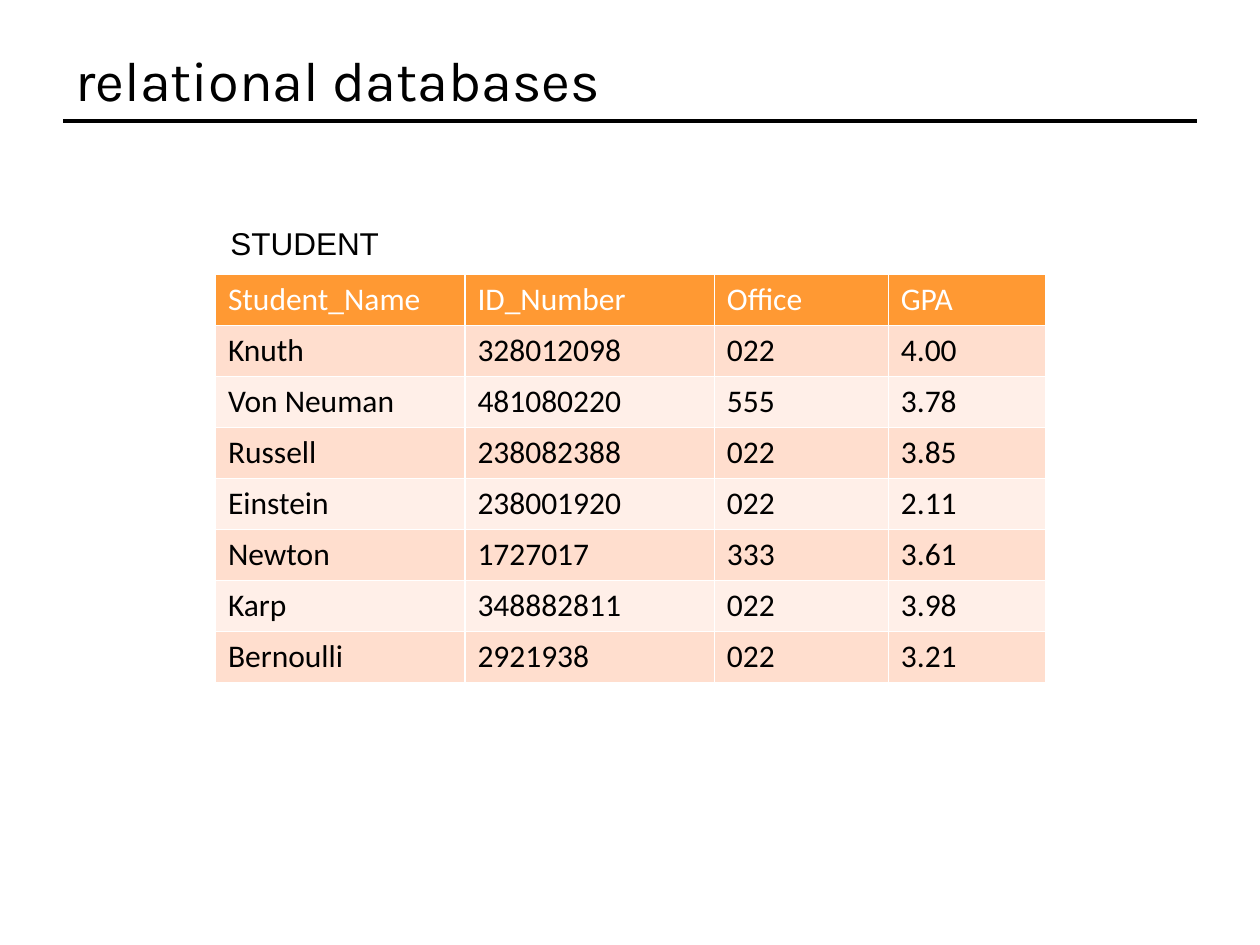
from pptx import Presentation
from pptx.dml.color import RGBColor
from pptx.enum.shapes import MSO_CONNECTOR
from pptx.enum.text import MSO_ANCHOR
from pptx.oxml.ns import qn
from pptx.util import Inches, Pt
from lxml import etree

STRAIGHT = MSO_CONNECTOR.STRAIGHT
MIDDLE = MSO_ANCHOR.MIDDLE

COLORS = {
    "text": "000000",
    "header_text": "FFFFFF",
    "header": "FF9933",
    "odd_row": "FFDECE",
    "even_row": "FFEFE8",
}
TITLE = "relational databases"
TABLE_NAME = "STUDENT"
STUDENTS = [
    ("Student_Name", "ID_Number", "Office", "GPA"),
    ("Knuth", "328012098", "022", "4.00"),
    ("Von Neuman", "481080220", "555", "3.78"),
    ("Russell", "238082388", "022", "3.85"),
    ("Einstein", "238001920", "022", "2.11"),
    ("Newton", "1727017", "333", "3.61"),
    ("Karp", "348882811", "022", "3.98"),
    ("Bernoulli", "2921938", "022", "3.21"),
]
COLUMN_WIDTHS = [1.98, 1.98, 1.38, 1.25]
ROW_HEIGHT = 0.405


def color(name):
    return RGBColor.from_string(COLORS[name])


def write(frame, text, font_name, size, color_name):
    para = frame.paragraphs[0]
    para.text = text
    font = para.font
    font.name = font_name
    font.size = Pt(size)
    font.bold = False
    font.color.rgb = color(color_name)


def add_text(page, place, text, font_name, size, wrap):
    box = page.shapes.add_textbox(*map(Inches, place))
    frame = box.text_frame
    frame.word_wrap = wrap
    frame.vertical_anchor = MIDDLE
    write(frame, text, font_name, size, "text")


def add_rule(page):
    rule = page.shapes.add_connector(
        STRAIGHT, Inches(0.5), Inches(0.96), Inches(9.5), Inches(0.96))
    rule.line.color.rgb = color("text")
    rule.line.width = Pt(2)
    etree.SubElement(rule.element.spPr, qn("a:effectLst"))


def add_students(page):
    table = page.shapes.add_table(
        len(STUDENTS), len(COLUMN_WIDTHS), Inches(1.71), Inches(2.18),
        Inches(sum(COLUMN_WIDTHS)), Inches(ROW_HEIGHT * len(STUDENTS))).table
    for column, width in zip(table.columns, COLUMN_WIDTHS):
        column.width = Inches(width)
    for row_index, values in enumerate(STUDENTS):
        table.rows[row_index].height = Inches(ROW_HEIGHT)
        if row_index == 0:
            fill_name, text_name = "header", "header_text"
        else:
            fill_name = "odd_row" if row_index % 2 else "even_row"
            text_name = "text"
        for column_index, value in enumerate(values):
            cell = table.cell(row_index, column_index)
            cell.fill.solid()
            cell.fill.fore_color.rgb = color(fill_name)
            write(cell.text_frame, value, "Calibri", 18, text_name)


def main():
    deck = Presentation()
    deck.slide_width = Inches(10)
    deck.slide_height = Inches(7.5)
    page = deck.slides.add_slide(deck.slide_layouts[6])
    add_rule(page)
    add_text(page, (0.5, 0.3, 9, 0.66), TITLE, "Karla", 32, True)
    add_students(page)
    add_text(page, (1.73, 1.73, 1.39, 0.4), TABLE_NAME, "Arial", 18, False)
    deck.save("out.pptx")


if __name__ == "__main__":
    main()
